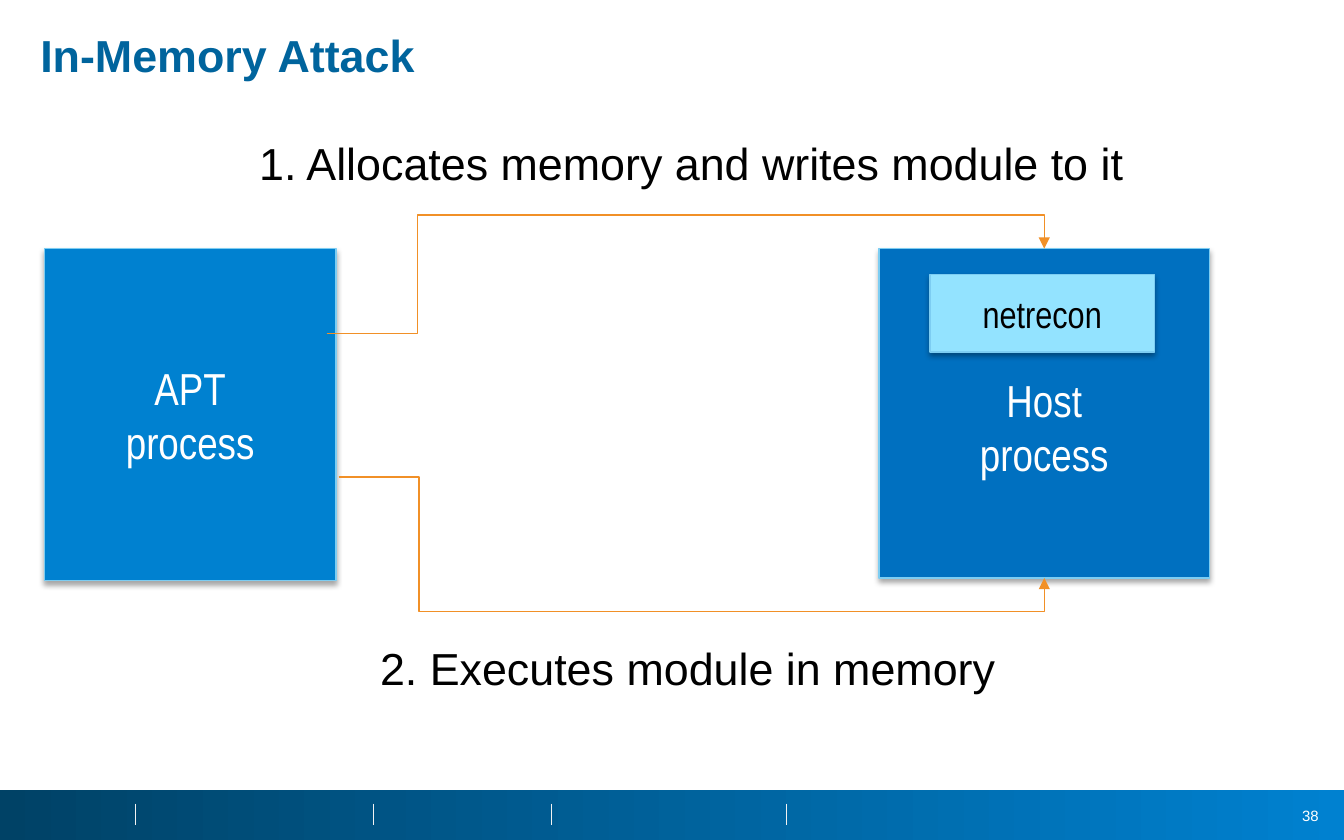
from lxml import etree
from pptx import Presentation
from pptx.dml.color import RGBColor
from pptx.enum.shapes import MSO_CONNECTOR, MSO_SHAPE
from pptx.enum.text import MSO_ANCHOR, PP_ALIGN
from pptx.oxml import parse_xml
from pptx.oxml.ns import nsdecls, qn
from pptx.util import Inches, Pt

RECTANGLE = MSO_SHAPE.RECTANGLE
STRAIGHT, ELBOW = MSO_CONNECTOR.STRAIGHT, MSO_CONNECTOR.ELBOW
TOP, MIDDLE = MSO_ANCHOR.TOP, MSO_ANCHOR.MIDDLE
LEFT, CENTER, RIGHT = PP_ALIGN.LEFT, PP_ALIGN.CENTER, PP_ALIGN.RIGHT

SHADOW = f"""<a:outerShdw {nsdecls('a')} blurRad="39370" dist="22860" dir="5400000" rotWithShape="0">
<a:srgbClr val="000000"><a:alpha val="35000"/></a:srgbClr></a:outerShdw>"""


def color(value):
    return RGBColor.from_string(value)


def write(shape, text, size=24, font="Arial", fill="000000", bold=False,
          align=LEFT, anchor=TOP, spacing=1.0, top=0.05):
    frame = shape.text_frame
    frame.word_wrap = True
    frame.vertical_anchor = anchor
    frame.margin_left = frame.margin_right = Inches(0.1)
    frame.margin_top, frame.margin_bottom = Inches(top), Inches(0.05)
    frame.text = text
    for paragraph in frame.paragraphs:
        paragraph.alignment = align
        paragraph.line_spacing = spacing
        paragraph.font.size = Pt(size)
        paragraph.font.name = font
        paragraph.font.bold = bold
        paragraph.font.color.rgb = color(fill)


presentation = Presentation()
presentation.slide_width = Inches(10)
presentation.slide_height = Inches(6.25)
slide = presentation.slides.add_slide(presentation.slide_layouts[5])
shapes = slide.shapes

title = shapes.title
title.left, title.top = Inches(0.2), Inches(0.2)
title.width, title.height = Inches(9.59), Inches(0.36)
write(title, "In-Memory Attack", fill="00649D", bold=True, spacing=0.9)

footer = shapes.add_shape(RECTANGLE, Inches(0), Inches(5.88), Inches(10), Inches(0.37))
footer.shadow.inherit = False
footer.line.fill.background()
footer.fill.gradient()
footer.fill.gradient_angle = 0
for stop, value in zip(footer.fill.gradient_stops, ("004266", "0081D0")):
    stop.color.rgb = color(value)

number = shapes.add_textbox(Inches(9.49), Inches(5.95), Inches(0.42), Inches(0.24))
write(number, "38", size=8, fill="FFFFFF", align=RIGHT, anchor=MIDDLE)

for x in (1.01, 2.78, 4.1, 5.85):
    divider = shapes.add_connector(STRAIGHT, Inches(x), Inches(5.98), Inches(x), Inches(6.14))
    divider.line.color.rgb = color("F2F2F2")
    divider.line.width = Pt(0.25)
    etree.SubElement(divider._element.spPr, qn("a:effectLst"))

boxes = [
    ("APT\nprocess", 0.33, 1.85, 2.17, 2.47, "0081D0", "FFFFFF", 24, 0.05),
    ("Host\nprocess", 6.54, 1.85, 2.46, 2.45, "0070C0", "FFFFFF", 24, 0.25),
    ("netrecon", 6.92, 2.04, 1.67, 0.58, "93E3FF", "000000", 20, 0.05),
]
for text, x, y, width, height, fill, text_fill, size, top in boxes:
    box = shapes.add_shape(RECTANGLE, Inches(x), Inches(y), Inches(width), Inches(height))
    box.fill.solid()
    box.fill.fore_color.rgb = color(fill)
    box.line.color.rgb = color("7DCDF2")
    box.line.width = Pt(0.75)
    box.shadow.inherit = False
    box._element.spPr.find(qn("a:effectLst")).append(parse_xml(SHADOW))
    write(box, text, size=size, font="Arial Narrow", fill=text_fill,
          align=CENTER, anchor=MIDDLE, top=top)

steps = [
    ("1. Allocates memory and writes module to it", 1.83, 0.96, 6.72),
    ("2. Executes module in memory", 2.73, 4.72, 5),
]
for text, x, y, width in steps:
    step = shapes.add_textbox(Inches(x), Inches(y), Inches(width), Inches(0.5))
    write(step, text)

arrows = [
    (2.43, 2.48, 1.85, 3.11, 1.6),
    (2.52, 3.55, 4.3, 3.12, 4.55),
]
host_center = 7.77
for x, start_y, end_y, bend_x, bend_y in arrows:
    arrow = shapes.add_connector(ELBOW, Inches(x), Inches(start_y), Inches(host_center), Inches(end_y))
    arrow.line.color.rgb = color("F19027")
    arrow.line.width = Pt(0.75)
    properties = arrow._element.spPr
    geometry = properties.find(qn("a:prstGeom"))
    geometry.set("prst", "bentConnector4")
    guides = geometry.find(qn("a:avLst"))
    bends = ((bend_x - x) / (host_center - x), (bend_y - start_y) / (end_y - start_y))
    for index, bend in enumerate(bends, 1):
        etree.SubElement(guides, qn("a:gd"), name=f"adj{index}", fmla=f"val {round(bend * 100000)}")
    etree.SubElement(properties.find(qn("a:ln")), qn("a:tailEnd"), type="triangle")
    etree.SubElement(properties, qn("a:effectLst"))

presentation.save("out.pptx")
